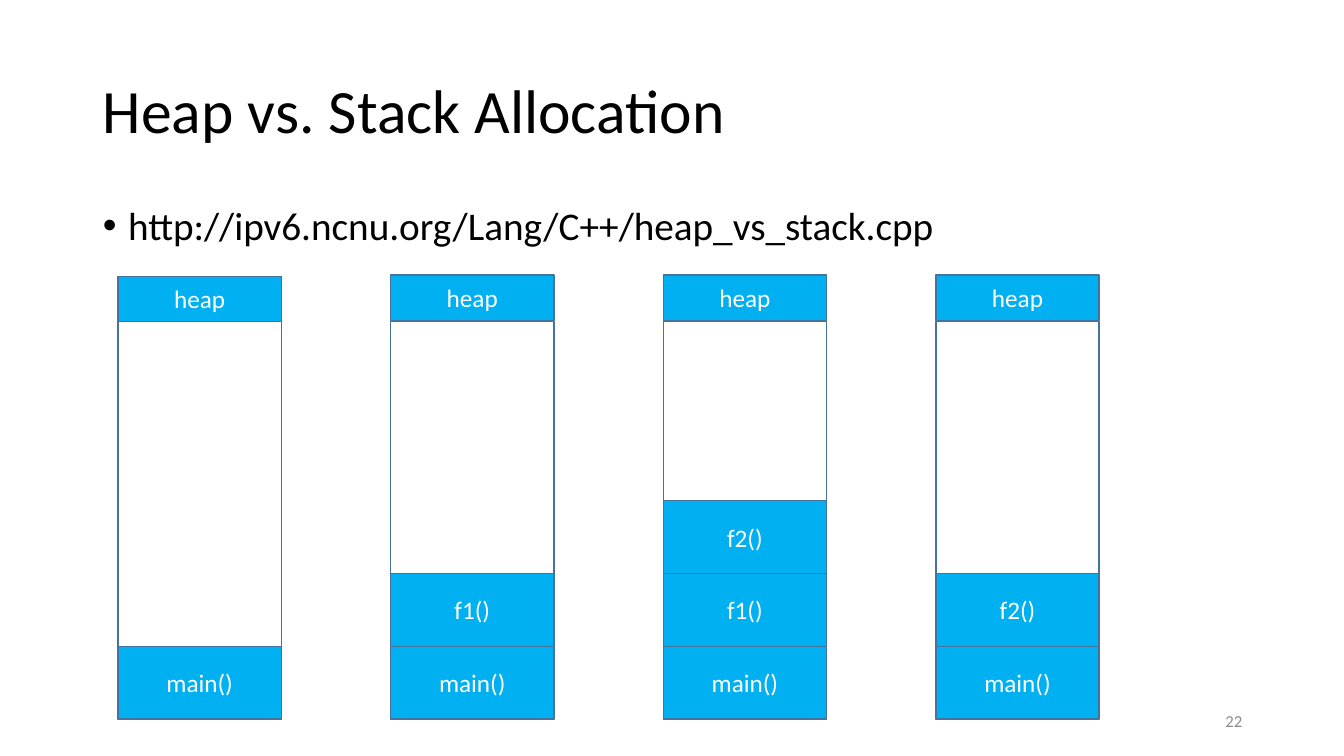
from pptx import Presentation
from pptx.dml.color import RGBColor
from pptx.enum.shapes import MSO_SHAPE
from pptx.enum.text import MSO_ANCHOR, MSO_AUTO_SIZE, PP_ALIGN
from pptx.util import Inches, Pt

RECTANGLE = MSO_SHAPE.RECTANGLE
MIDDLE, TOP = MSO_ANCHOR.MIDDLE, MSO_ANCHOR.TOP
LEFT, CENTER, RIGHT = PP_ALIGN.LEFT, PP_ALIGN.CENTER, PP_ALIGN.RIGHT
NO_AUTOFIT = MSO_AUTO_SIZE.NONE

FONT = "Calibri"
COLORS = {"text": "000000", "number": "8C8C8C", "block": "00B0F0",
          "outline": "43739E", "label": "FFFFFF"}

# Memory grid, in inches: one column per snapshot, one row per stack frame
FIRST_COLUMN, COLUMN_PITCH, COLUMN_WIDTH = 1.17, 2.704, 1.62
MEMORY_TOP, MEMORY_BOTTOM = 3.19, 7.135
FRAME_HEIGHT, HEAP_HEIGHT = 0.723, 0.45
SNAPSHOTS = [["main()"], ["main()", "f1()"],
             ["main()", "f1()", "f2()"], ["main()", "f2()"]]


def color(name):
    return RGBColor.from_string(COLORS[name])


def place(shape, left, top, width, height):
    shape.left, shape.top = Inches(left), Inches(top)
    shape.width, shape.height = Inches(width), Inches(height)


def write(shape, text, size, color_name, alignment, anchor=MIDDLE):
    """Fill a shape with one formatted paragraph and return the paragraph."""
    text_frame = shape.text_frame
    text_frame.text = text
    text_frame.word_wrap = True
    text_frame.auto_size = NO_AUTOFIT
    text_frame.vertical_anchor = anchor
    paragraph = text_frame.paragraphs[0]
    paragraph.alignment = alignment
    font = paragraph.runs[0].font
    font.name, font.size = FONT, Pt(size)
    font.color.rgb = color(color_name)
    return paragraph


def add_heading(slide, text):
    title = slide.shapes.title
    place(title, 0.92, 0.4, 11.5, 1.45)
    write(title, text, 44, "text", LEFT).line_spacing = 0.9


def add_bullet(slide, text):
    body = slide.placeholders[1]
    place(body, 0.92, 2, 11.5, 0.6)
    paragraph = write(body, text, 28, "text", LEFT, TOP)
    paragraph.line_spacing = 0.9
    paragraph.space_before = Pt(10)
    properties = paragraph._p.get_or_add_pPr()
    properties.set("marL", str(Inches(0.25)))
    properties.set("indent", str(-Inches(0.25)))


def add_page_number(slide, text):
    box = slide.shapes.add_textbox(Inches(9.42), Inches(6.95), Inches(3), Inches(0.4))
    write(box, text, 12, "number", RIGHT)


def add_block(slide, column, top, height, label=None):
    """Add a filled, labelled block, or an empty outline without a label."""
    left = FIRST_COLUMN + column * COLUMN_PITCH
    block = slide.shapes.add_shape(RECTANGLE, Inches(left), Inches(top),
                                   Inches(COLUMN_WIDTH), Inches(height))
    block.shadow.inherit = False
    block.line.color.rgb = color("outline")
    block.line.width = Pt(1)
    if label is None:
        block.fill.background()
    else:
        block.fill.solid()
        block.fill.fore_color.rgb = color("block")
        write(block, label, 18, "label", CENTER)


def add_snapshot(slide, column, calls):
    """Draw one memory column: the heap on top, calls stacked from the bottom."""
    add_block(slide, column, MEMORY_TOP, MEMORY_BOTTOM - MEMORY_TOP)
    for row, call in enumerate(calls, start=1):
        add_block(slide, column, MEMORY_BOTTOM - row * FRAME_HEIGHT, FRAME_HEIGHT, call)
    heap_gap = 0 if column == 0 else 0.01
    add_block(slide, column, MEMORY_TOP - HEAP_HEIGHT - heap_gap, HEAP_HEIGHT, "heap")


def main():
    presentation = Presentation()
    presentation.slide_width, presentation.slide_height = Inches(13.33), Inches(7.5)
    slide = presentation.slides.add_slide(presentation.slide_layouts[1])
    add_heading(slide, "Heap vs. Stack Allocation")
    add_bullet(slide, "http://ipv6.ncnu.org/Lang/C++/heap_vs_stack.cpp")
    add_page_number(slide, "22")
    for column, calls in enumerate(SNAPSHOTS):
        add_snapshot(slide, column, calls)
    presentation.save("out.pptx")


if __name__ == "__main__":
    main()
